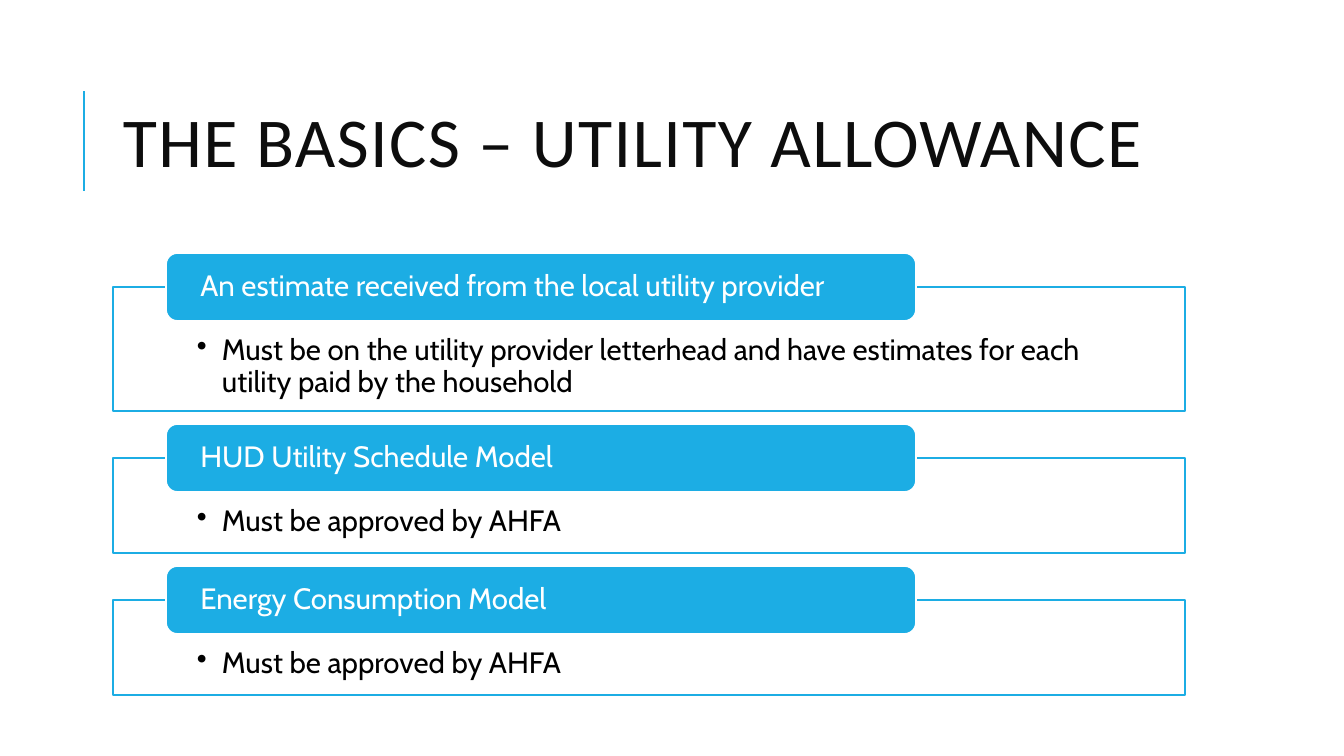
from lxml import etree
from pptx import Presentation
from pptx.dml.color import RGBColor
from pptx.enum.shapes import MSO_CONNECTOR, MSO_SHAPE
from pptx.enum.text import MSO_ANCHOR, PP_ALIGN
from pptx.oxml.ns import qn
from pptx.util import Emu, Pt

# Content: heading, bullet, frame height in px
TITLE = "THE BASICS – UTILITY ALLOWANCE"
SECTIONS = [
    ("An estimate received from the local utility provider",
     "Must be on the utility provider letterhead and have estimates for each "
     "utility paid by the household", 124),
    ("HUD Utility Schedule Model", "Must be approved by AHFA", 95),
    ("Energy Consumption Model", "Must be approved by AHFA", 95),
]

# Style
BLUE = RGBColor(0x1C, 0xAD, 0xE4)
WHITE = RGBColor(0xFF, 0xFF, 0xFF)
BLACK = RGBColor(0, 0, 0)
TITLE_INK = RGBColor(0x0D, 0x0D, 0x0D)
RECT, ROUND = MSO_SHAPE.RECTANGLE, MSO_SHAPE.ROUNDED_RECTANGLE
TOP, MIDDLE = MSO_ANCHOR.TOP, MSO_ANCHOR.MIDDLE
LEFT = PP_ALIGN.LEFT

# Layout in px
SLIDE_W, SLIDE_H = 1344, 756
FRAME_X, FRAME_W, FIRST_Y, FRAME_GAP = 113, 1072, 287, 47
HEAD_X, HEAD_W, HEAD_H = 166, 750, 68
BULLET_INDENT = 25


def px(n):
    return Emu(round(n * 914400 / 100.8))


def add_text(sp, text, font, size, color, anchor, insets, spacing):
    tf = sp.text_frame
    tf.word_wrap = True
    tf.vertical_anchor = anchor
    tf.margin_left, tf.margin_top, tf.margin_right, tf.margin_bottom = map(px, insets)
    p = tf.paragraphs[0]
    p.alignment = LEFT
    p.line_spacing = spacing
    r = p.add_run()
    r.text = text
    r.font.name = font
    r.font.size = Pt(size)
    r.font.color.rgb = color
    return p


def add_box(s, kind, box, fill, line):
    sp = s.shapes.add_shape(kind, *map(px, box))
    sp.shadow.inherit = False
    sp.fill.solid()
    sp.fill.fore_color.rgb = fill
    sp.line.color.rgb = line
    sp.line.width = Pt(1.25)
    return sp


def add_bullet(p):
    pPr = p._p.get_or_add_pPr()
    pPr.set("marL", str(px(BULLET_INDENT)))
    pPr.set("indent", str(-px(BULLET_INDENT)))
    etree.SubElement(pPr, qn("a:buChar")).set("char", "•")


prs = Presentation()
prs.slide_width, prs.slide_height = px(SLIDE_W), px(SLIDE_H)
s = prs.slides.add_slide(prs.slide_layouts[6])

# Title with its accent line
accent = s.shapes.add_connector(MSO_CONNECTOR.STRAIGHT, px(84), px(191), px(84), px(91))
accent.line.color.rgb = BLUE
accent.line.width = Pt(1.5)
etree.SubElement(accent._element.spPr, qn("a:effectLst"))

title = s.shapes.add_textbox(px(FRAME_X), px(65), px(FRAME_W), px(165))
p = add_text(title, TITLE, "Calibri", 50, TITLE_INK, MIDDLE, (10, 5, 10, 5), 0.8)
p.runs[0].font._element.set("spc", "100")

# Framed sections, each heading centred on the top edge of its frame
y = FIRST_Y
for heading, bullet, height in SECTIONS:
    frame = add_box(s, RECT, (FRAME_X, y, FRAME_W, height), WHITE, BLUE)
    p = add_text(frame, bullet, "Cabin", 21, BLACK, TOP, (84, 48, 84, 16), 0.9)
    add_bullet(p)
    head = add_box(s, ROUND, (HEAD_X, y - HEAD_H / 2, HEAD_W, HEAD_H), BLUE, WHITE)
    add_text(head, heading, "Cabin", 21, WHITE, MIDDLE, (31, 0, 31, 0), 0.9)
    y += height + FRAME_GAP

prs.save("out.pptx")
